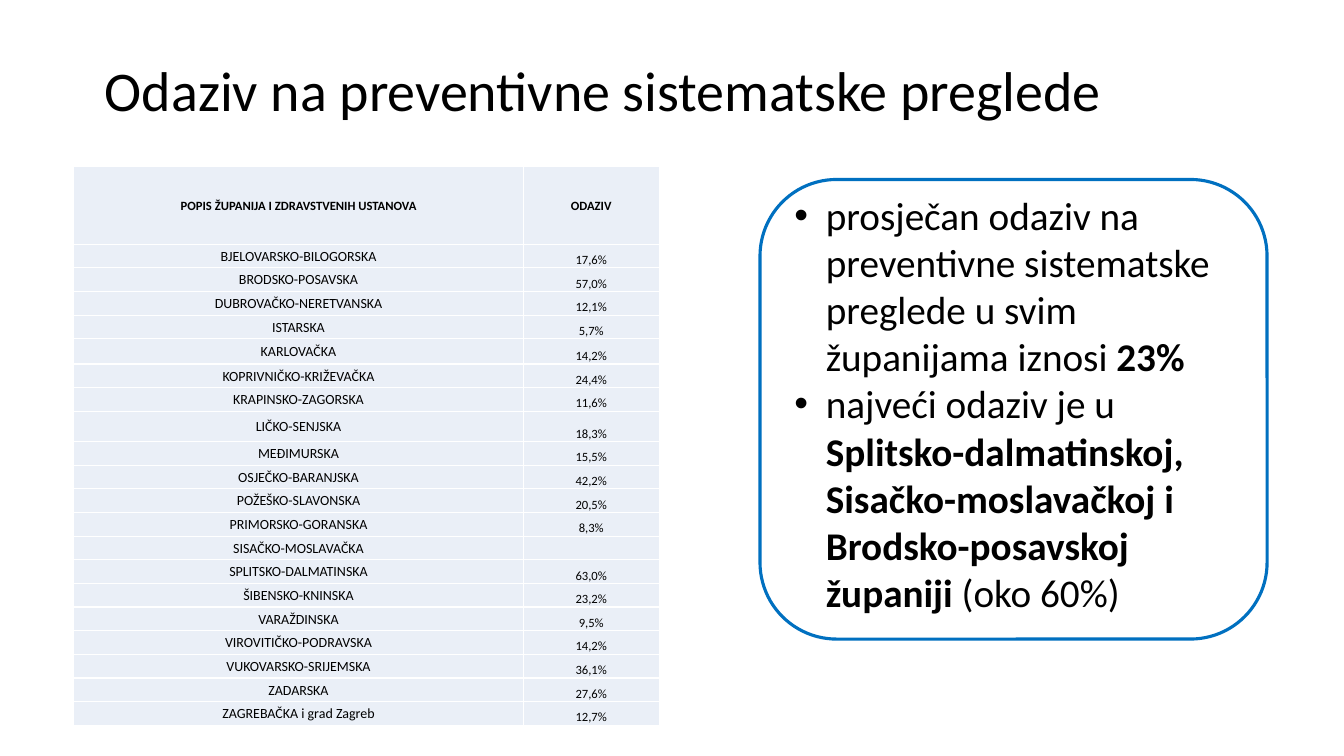
from lxml.etree import SubElement
from pptx import Presentation
from pptx.dml.color import RGBColor
from pptx.enum.shapes import MSO_SHAPE
from pptx.enum.text import MSO_ANCHOR, MSO_AUTO_SIZE, PP_ALIGN
from pptx.oxml.ns import qn
from pptx.util import Pt

RESPONSES = [
    ("BJELOVARSKO-BILOGORSKA", "17,6%"),
    ("BRODSKO-POSAVSKA", "57,0%"),
    ("DUBROVAČKO-NERETVANSKA", "12,1%"),
    ("ISTARSKA", "5,7%"),
    ("KARLOVAČKA", "14,2%"),
    ("KOPRIVNIČKO-KRIŽEVAČKA", "24,4%"),
    ("KRAPINSKO-ZAGORSKA", "11,6%"),
    ("LIČKO-SENJSKA", "18,3%"),
    ("MEĐIMURSKA", "15,5%"),
    ("OSJEČKO-BARANJSKA", "42,2%"),
    ("POŽEŠKO-SLAVONSKA", "20,5%"),
    ("PRIMORSKO-GORANSKA", "8,3%"),
    ("SISAČKO-MOSLAVAČKA", ""),
    ("SPLITSKO-DALMATINSKA", "63,0%"),
    ("ŠIBENSKO-KNINSKA", "23,2%"),
    ("VARAŽDINSKA", "9,5%"),
    ("VIROVITIČKO-PODRAVSKA", "14,2%"),
    ("VUKOVARSKO-SRIJEMSKA", "36,1%"),
    ("ZADARSKA", "27,6%"),
    ("ZAGREBAČKA i grad Zagreb", "12,7%"),
]
HEADER = ("POPIS ŽUPANIJA I ZDRAVSTVENIH USTANOVA", "ODAZIV")
HEADER_HEIGHT, ROW_HEIGHT = 55.4, 16.9
TALL_ROWS = {"KARLOVAČKA": 18, "LIČKO-SENJSKA": 21.6}

FINDINGS = [
    [("prosječan odaziv na preventivne sistematske preglede u svim županijama iznosi ", False),
     ("23%", True)],
    [("najveći odaziv je u ", False),
     ("Splitsko-dalmatinskoj, Sisačko-moslavačkoj i Brodsko-posavskoj županiji ", True),
     ("(oko 60%)", False)],
]


def color(value):
    return RGBColor.from_string(value)


def add_text(para, text, size, bold=False, font="Calibri", ink="000000"):
    span = para.add_run()
    span.text = text
    span.font.name = font
    span.font.size = Pt(size)
    span.font.bold = bold
    span.font.color.rgb = color(ink)


def place(shape, left, top, width, height):
    shape.left, shape.top = Pt(left), Pt(top)
    shape.width, shape.height = Pt(width), Pt(height)


class SlideBuilder:
    cell_fill = "EAEFF7"
    cell_border = "FFFFFF"
    accent = "0070C0"

    def __init__(self, deck):
        self.page = deck.slides.add_slide(deck.slide_layouts[1])

    def title(self, text, *frame):
        box = self.page.shapes.title
        place(box, *frame)
        box.text_frame.auto_size = MSO_AUTO_SIZE.NONE
        box.text_frame.vertical_anchor = MSO_ANCHOR.MIDDLE
        para = box.text_frame.paragraphs[0]
        para.alignment = PP_ALIGN.LEFT
        para.line_spacing = 0.9
        add_text(para, text, 40)

    def bullets(self, items, *frame):
        box = self.page.placeholders[1]
        place(box, *frame)
        text_frame = box.text_frame
        text_frame.auto_size = MSO_AUTO_SIZE.NONE
        for index, spans in enumerate(items):
            para = text_frame.add_paragraph() if index else text_frame.paragraphs[0]
            para.space_before = Pt(0)
            properties = para._p.get_or_add_pPr()
            properties.set("marL", str(Pt(22.5)))
            properties.set("indent", str(-Pt(22.5)))
            SubElement(properties, qn("a:buFont"), typeface="Arial")
            SubElement(properties, qn("a:buChar"), char="•")
            for text, bold in spans:
                add_text(para, text, 28, bold)

    def cell(self, cell, text, size, bold, anchor):
        cell.margin_left = cell.margin_right = cell.margin_top = Pt(0.7)
        cell.margin_bottom = Pt(0)
        cell.vertical_anchor = anchor
        para = cell.text_frame.paragraphs[0]
        para.alignment = PP_ALIGN.CENTER
        if text:
            add_text(para, text, size, bold)
        else:
            SubElement(para._p, qn("a:endParaRPr"), sz=str(size * 100))
        properties = cell._tc.get_or_add_tcPr()
        for side in ("lnL", "lnR", "lnT", "lnB"):
            line = SubElement(properties, qn(f"a:{side}"), w=str(Pt(1)))
            fill = SubElement(line, qn("a:solidFill"))
            SubElement(fill, qn("a:srgbClr"), val=self.cell_border)
        cell.fill.solid()
        cell.fill.fore_color.rgb = color(self.cell_fill)

    def table(self, header, rows, left, top, widths, heights):
        frame = self.page.shapes.add_table(
            len(rows) + 1, len(widths), Pt(left), Pt(top), Pt(sum(widths)), Pt(sum(heights)))
        table = frame.table
        table.first_row = table.horz_banding = False
        for column, width in zip(table.columns, widths):
            column.width = Pt(width)
        for row, height in zip(table.rows, heights):
            row.height = Pt(height)
        for row_index, values in enumerate([header, *rows]):
            is_header = row_index == 0
            for column_index, value in enumerate(values):
                is_name = column_index == 0
                self.cell(
                    table.cell(row_index, column_index), value,
                    size=10 if is_name and not is_header else 9, bold=is_header,
                    anchor=MSO_ANCHOR.MIDDLE if is_name or is_header else MSO_ANCHOR.BOTTOM)

    def rounded_outline(self, *frame):
        shape = self.page.shapes.add_shape(
            MSO_SHAPE.ROUNDED_RECTANGLE, *(Pt(length) for length in frame))
        shape.shadow.inherit = False
        shape.fill.background()
        shape.line.color.rgb = color(self.accent)
        shape.line.width = Pt(2.25)


def main():
    deck = Presentation()
    deck.slide_width, deck.slide_height = Pt(960), Pt(540)
    slide = SlideBuilder(deck)
    slide.title("Odaziv na preventivne sistematske preglede", 67.7, 14.4, 828, 104.4)
    heights = [HEADER_HEIGHT] + [TALL_ROWS.get(name, ROW_HEIGHT) for name, _ in RESPONSES]
    slide.table(HEADER, RESPONSES, 52.7, 119, (321, 97.2), heights)
    slide.bullets(FINDINGS, 560.2, 133.2, 328.3, 312.5)
    slide.rounded_outline(542.9, 128.2, 362.2, 328.3)
    deck.save("out.pptx")


if __name__ == "__main__":
    main()
